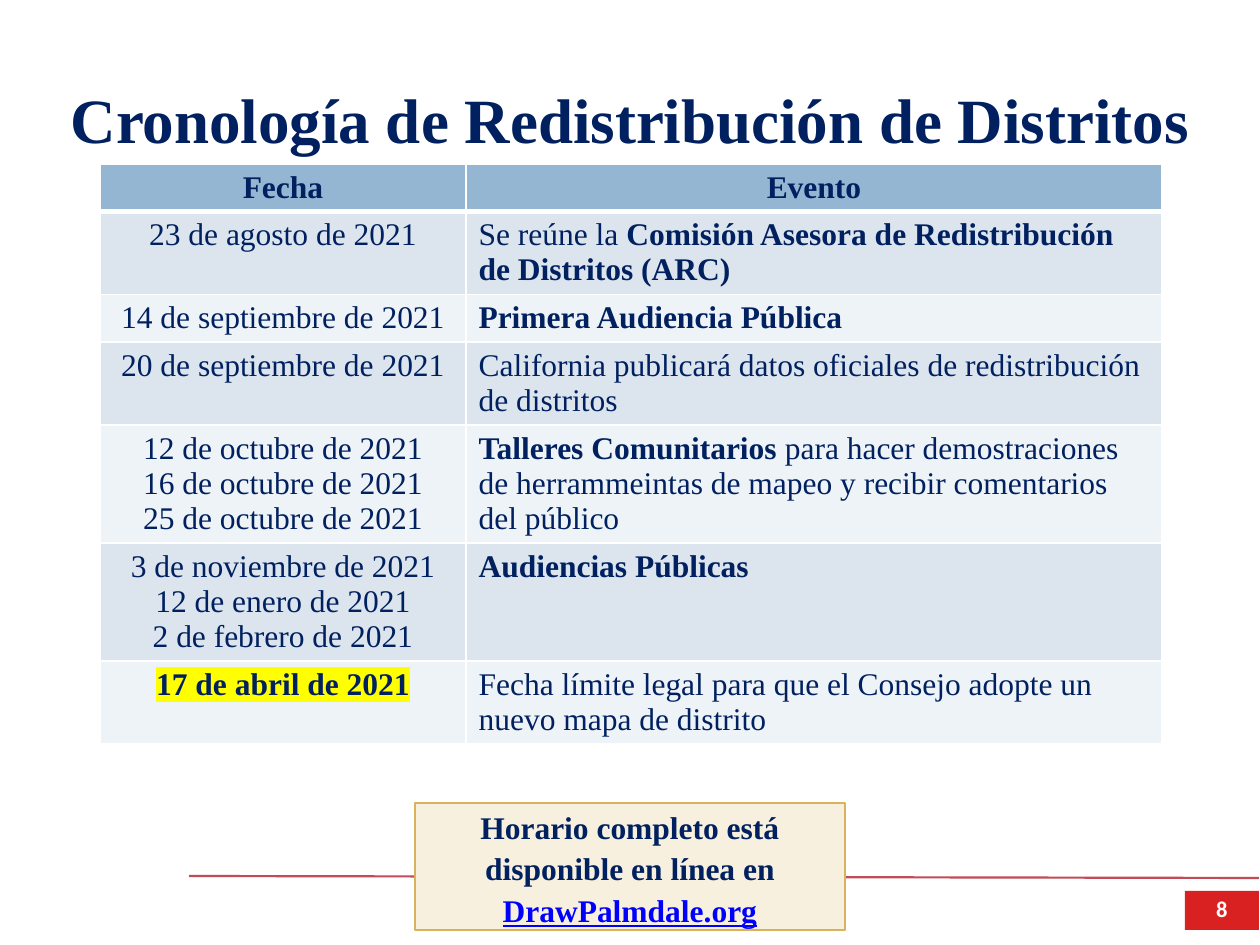
from dataclasses import dataclass

from lxml.etree import SubElement
from pptx import Presentation
from pptx.dml.color import RGBColor
from pptx.enum.shapes import MSO_CONNECTOR, MSO_SHAPE
from pptx.enum.text import MSO_ANCHOR, PP_ALIGN
from pptx.oxml import parse_xml
from pptx.oxml.ns import nsdecls, qn
from pptx.util import Pt

NAVY = RGBColor(0x00, 0x20, 0x60)
WHITE = RGBColor(0xFF, 0xFF, 0xFF)
RED = RGBColor(0xD9, 0x21, 0x21)
CRIMSON = RGBColor(0xB5, 0x1E, 0x2D)
HEADER_BLUE = RGBColor(0x94, 0xB6, 0xD2)
BAND_DARK = RGBColor(0xDC, 0xE5, 0xEE)
BAND_LIGHT = RGBColor(0xEE, 0xF3, 0xF7)
CREAM = RGBColor(0xF7, 0xF0, 0xDE)
GOLD = RGBColor(0xD8, 0xB2, 0x5C)
LINK_BLUE = RGBColor(0x00, 0x00, 0xFF)
YELLOW = RGBColor(0xFF, 0xFF, 0x00)

COLUMN_WIDTHS = [366, 696]
ROW_HEIGHTS = [47, 83, 47, 83, 118, 118, 83]


@dataclass
class Span:
    """A stretch of text with its own look."""
    text: str
    bold: bool = False
    color: RGBColor = NAVY
    underline: bool = False
    highlight: RGBColor = None


HEADINGS = ["Fecha", "Evento"]
TIMELINE = [
    ([Span("23 de agosto de 2021")],
     [Span("Se reúne la "),
      Span("Comisión Asesora de Redistribución de Distritos (ARC)", bold=True)]),
    ([Span("14 de septiembre de 2021")],
     [Span("Primera Audiencia Pública", bold=True)]),
    ([Span("20 de septiembre de 2021")],
     [Span("California publicará datos oficiales de redistribución de distritos")]),
    ([Span("12 de octubre de 2021"), Span("16 de octubre de 2021"),
      Span("25 de octubre de 2021")],
     [Span("Talleres Comunitarios ", bold=True),
      Span("para hacer demostraciones de herrammeintas de mapeo "
           "y recibir comentarios del público")]),
    ([Span("3 de noviembre de 2021"), Span("12 de enero de 2021"),
      Span("2 de febrero de 2021")],
     [Span("Audiencias Públicas", bold=True)]),
    ([Span("17 de abril de 2021", bold=True, highlight=YELLOW)],
     [Span("Fecha límite legal para que el Consejo adopte un nuevo mapa de distrito")]),
]


class SlideBuilder:
    """Holds the deck style and the current slide."""

    scale = 914400 / 126
    font = "Times New Roman"

    def __init__(self):
        self.deck = Presentation()
        self.deck.slide_width, self.deck.slide_height = self.emu(1260, 945)
        self.page = self.deck.slides.add_slide(self.deck.slide_layouts[5])

    def emu(self, *lengths):
        return [round(length * self.scale) for length in lengths]

    def set_text(self, frame, paragraphs, align, size=18, font=font, spacing=None):
        frame.word_wrap = True
        for index, spans in enumerate(paragraphs):
            para = frame.paragraphs[0] if index == 0 else frame.add_paragraph()
            para.alignment = align
            if spacing:
                para.line_spacing = spacing
            for span in spans:
                run = para.add_run()
                run.text = span.text
                run.font.size = Pt(size)
                run.font.bold = span.bold
                run.font.color.rgb = span.color
                if span.underline:
                    run.font.underline = True
                if span.highlight:
                    self.highlight(run, span.highlight)
                run.font.name = font

    def highlight(self, run, color):
        mark = SubElement(run.font._element, qn("a:highlight"))
        SubElement(mark, qn("a:srgbClr"), val=str(color))

    def set_insets(self, frame, inset):
        margin = self.emu(inset)[0]
        frame.margin_left = frame.margin_right = margin
        frame.margin_top = frame.margin_bottom = margin

    def title(self, text, left, top, width, height):
        box = self.page.shapes.title
        box.left, box.top, box.width, box.height = self.emu(left, top, width, height)
        frame = box.text_frame
        frame.vertical_anchor = MSO_ANCHOR.MIDDLE
        self.set_insets(frame, 6)
        self.set_text(frame, [[Span(text, bold=True)]], PP_ALIGN.CENTER, size=36)

    def line(self, x1, y1, x2, y2, color, width, opacity):
        rule = self.page.shapes.add_connector(
            MSO_CONNECTOR.STRAIGHT, *self.emu(x1, y1, x2, y2))
        rule.line.color.rgb = color
        rule.line.width = Pt(width)
        tint = next(rule._element.spPr.iter(qn("a:srgbClr")))
        SubElement(tint, qn("a:alpha"), val=str(opacity * 1000))
        SubElement(rule._element.spPr, qn("a:effectLst"))

    def rectangle(self, left, top, width, height, fill, border=None):
        box = self.page.shapes.add_shape(
            MSO_SHAPE.RECTANGLE, *self.emu(left, top, width, height))
        box.shadow.inherit = False
        box.fill.solid()
        box.fill.fore_color.rgb = fill
        if border:
            box.line.color.rgb = border
            box.line.width = Pt(0.75)
        else:
            box.line.fill.background()
        box.text_frame.vertical_anchor = MSO_ANCHOR.MIDDLE
        return box

    def cell(self, cell, paragraphs, align, fill, bottom=1):
        self.set_text(cell.text_frame, paragraphs, align)
        cell.fill.solid()
        cell.fill.fore_color.rgb = fill
        widths = {"lnL": 1, "lnR": 1, "lnT": 1, "lnB": bottom}
        for index, (side, width) in enumerate(widths.items()):
            edge = parse_xml(
                f'<a:{side} {nsdecls("a")} w="{Pt(width)}"><a:solidFill>'
                f'<a:srgbClr val="{WHITE}"/></a:solidFill></a:{side}>')
            cell._tc.get_or_add_tcPr().insert(index, edge)

    def timeline(self, left, top):
        grid = self.page.shapes.add_table(
            len(ROW_HEIGHTS), len(COLUMN_WIDTHS),
            *self.emu(left, top, sum(COLUMN_WIDTHS), sum(ROW_HEIGHTS))).table
        for column, width in zip(grid.columns, self.emu(*COLUMN_WIDTHS)):
            column.width = width
        for row, height in zip(grid.rows, self.emu(*ROW_HEIGHTS)):
            row.height = height
        for index, heading in enumerate(HEADINGS):
            self.cell(grid.cell(0, index), [[Span(heading, bold=True)]],
                      PP_ALIGN.CENTER, HEADER_BLUE, bottom=3)
        for index, (dates, event) in enumerate(TIMELINE, start=1):
            fill = BAND_DARK if index % 2 else BAND_LIGHT
            self.cell(grid.cell(index, 0), [[date] for date in dates],
                      PP_ALIGN.CENTER, fill)
            self.cell(grid.cell(index, 1), [event], PP_ALIGN.LEFT, fill)


def main():
    builder = SlideBuilder()
    builder.line(189, 876, 1259, 878, CRIMSON, 1.25, 80)
    number = builder.rectangle(1185, 891, 74, 39, RED)
    builder.set_insets(number.text_frame, 6)
    builder.set_text(number.text_frame, [[Span("8", bold=True, color=WHITE)]],
                     PP_ALIGN.CENTER, size=12.9, font="Calibri", spacing=0.9)
    builder.title("Cronología de Redistribución de Distritos", 1, 58, 1258, 120)
    builder.timeline(100, 164)
    notice = builder.rectangle(415, 803, 430, 127, CREAM, GOLD)
    builder.set_text(notice.text_frame,
                     [[Span("Horario completo está disponible en línea en ", bold=True),
                       Span("DrawPalmdale.org", bold=True, color=LINK_BLUE,
                            underline=True)]],
                     PP_ALIGN.CENTER, spacing=1.1)
    builder.deck.save("out.pptx")


if __name__ == "__main__":
    main()
